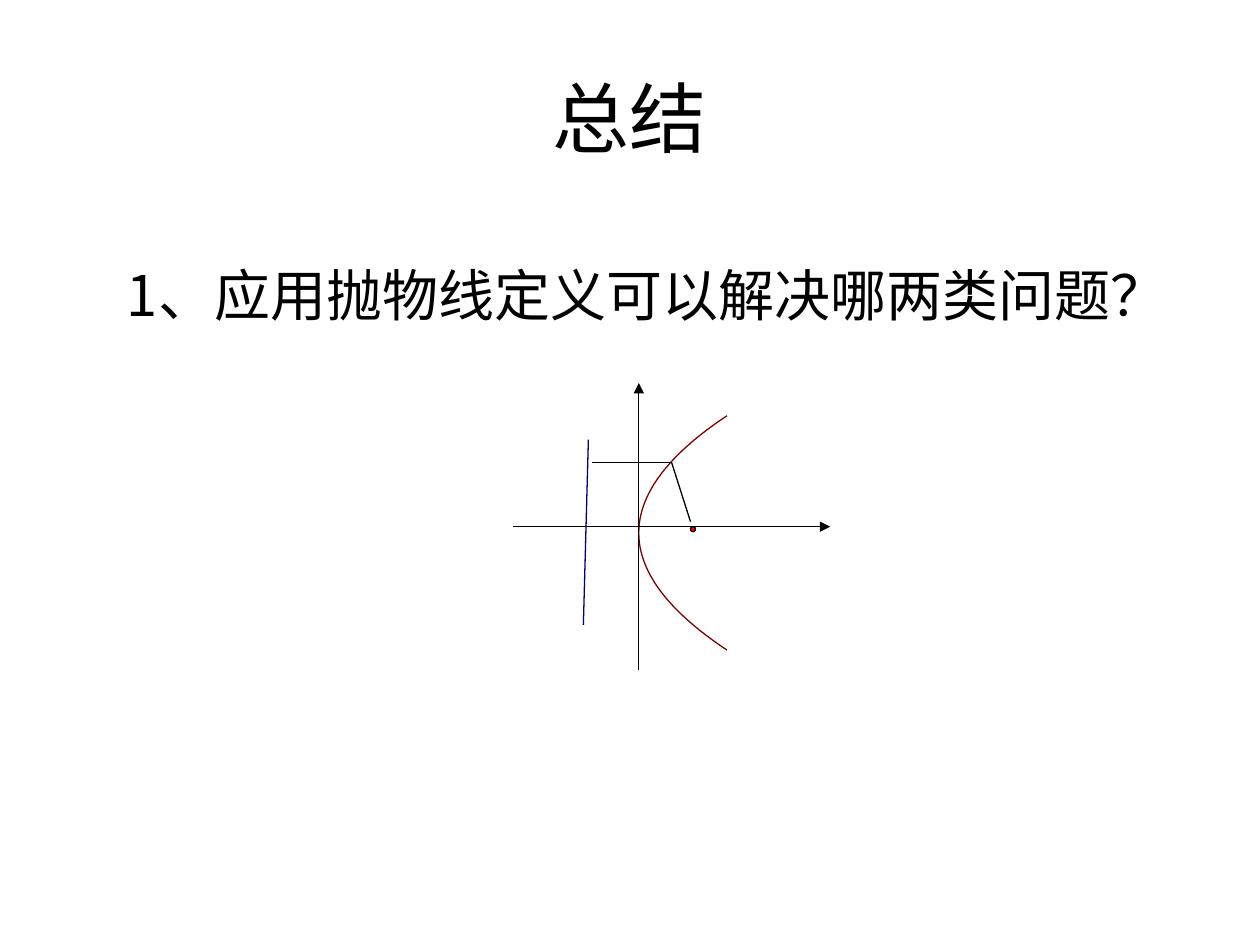
import pptx
import pptx.dml.color
import pptx.enum.shapes
import pptx.enum.text
import pptx.oxml
import pptx.oxml.ns
import pptx.util
from dataclasses import dataclass
from pptx.util import Inches


@dataclass(frozen=True)
class Theme:
    """Colours, fonts and type sizes of the slide."""
    text: str = "000000"
    axis: str = "000000"
    curve: str = "800000"
    directrix: str = "000080"
    focus: str = "FF0000"
    latin: str = "Arial"
    east_asian: str = "Noto Sans CJK SC"
    title_size: float = 44
    body_size: float = 32
    line_width: float = 0.75


THEME = Theme()


def rgb(value):
    """Return a colour from its hex digits."""
    return pptx.dml.color.RGBColor.from_string(value)


def set_attrs(obj, values):
    """Set each attribute named in a dict."""
    for name, value in values.items():
        setattr(obj, name, value)


def write_text(tf, text, size, font, align, anchor):
    """Write one formatted paragraph into a text frame."""
    set_attrs(tf, {"word_wrap": True, "vertical_anchor": anchor})
    p = tf.paragraphs[0]
    p.alignment = align
    r = p.add_run()
    r.text = text
    set_attrs(r.font, {"size": pptx.util.Pt(size), "name": font})
    r.font.color.rgb = rgb(THEME.text)
    ea = pptx.oxml.parse_xml(
        f'<a:ea {pptx.oxml.ns.nsdecls("a")} typeface="{THEME.east_asian}"/>')
    r.font._element.find(pptx.oxml.ns.qn("a:latin")).addnext(ea)


def add_title(s, box, text):
    """Place and format the title placeholder."""
    sp = s.shapes.title
    set_attrs(sp, dict(zip(("left", "top", "width", "height"), map(Inches, box))))
    write_text(sp.text_frame, text, THEME.title_size, THEME.latin,
               pptx.enum.text.PP_ALIGN.CENTER, pptx.enum.text.MSO_ANCHOR.MIDDLE)


def add_question(s, box, text):
    """Place the question in a text box."""
    tf = s.shapes.add_textbox(*map(Inches, box)).text_frame
    write_text(tf, text, THEME.body_size, THEME.east_asian,
               pptx.enum.text.PP_ALIGN.LEFT, pptx.enum.text.MSO_ANCHOR.TOP)
    tf.auto_size = pptx.enum.text.MSO_AUTO_SIZE.SHAPE_TO_FIT_TEXT


def add_line(shapes, start, end, color, arrow=False):
    """Draw a straight line, with an arrowhead at its end if asked."""
    cxn = shapes.add_connector(pptx.enum.shapes.MSO_CONNECTOR.STRAIGHT,
                               *map(Inches, start + end))
    cxn.line.width = pptx.util.Pt(THEME.line_width)
    cxn.line.color.rgb = rgb(color)
    ns = pptx.oxml.ns.nsdecls("a")
    if arrow:
        cxn.line._get_or_add_ln().append(
            pptx.oxml.parse_xml(f'<a:tailEnd {ns} type="triangle"/>'))
    cxn._element.spPr.append(pptx.oxml.parse_xml(f"<a:effectLst {ns}/>"))


def add_parabola(shapes, vertex, reach, half_height, steps=24):
    """Draw a parabola that opens to the right of its vertex."""
    points = [(Inches(vertex[0] + reach * (i / steps) ** 2),
               Inches(vertex[1] + half_height * i / steps))
              for i in range(steps, -steps - 1, -1)]
    builder = shapes.build_freeform(*points[0])
    builder.add_line_segments(points[1:], close=False)
    sp = builder.convert_to_shape()
    sp.shadow.inherit = False
    sp.fill.background()
    sp.line.width = pptx.util.Pt(THEME.line_width)
    sp.line.color.rgb = rgb(THEME.curve)


def add_focus(shapes, corner, size):
    """Draw the focus as a small dot."""
    sp = shapes.add_shape(pptx.enum.shapes.MSO_SHAPE.OVAL,
                          *map(Inches, corner + (size, size)))
    sp.shadow.inherit = False
    sp.fill.solid()
    sp.fill.fore_color.rgb = rgb(THEME.focus)
    sp.line.width = pptx.util.Pt(0)
    sp.line.color.rgb = rgb(THEME.axis)


def add_diagram(s, box):
    """Draw the parabola with its axes, directrix, focus and distances."""
    left, top, width, height = box
    shapes = s.shapes.add_group_shape().shapes

    def at(x, y):
        """Turn a position in the box into one on the slide."""
        return left + x, top + y

    origin_x, origin_y = 1.0, height / 2
    point = at(1.26, 0.63)
    add_parabola(shapes, at(origin_x, 1.19), 0.7, 0.93)
    add_line(shapes, at(0.6, 0.45), at(0.56, 1.92), THEME.directrix)
    add_focus(shapes, at(1.41, origin_y), 0.04)
    add_line(shapes, at(0, origin_y), at(width, origin_y), THEME.axis, arrow=True)
    add_line(shapes, at(origin_x, height), at(origin_x, 0), THEME.axis, arrow=True)
    for start in (at(0.63, 0.63), at(1.41, 1.1)):
        add_line(shapes, start, point, THEME.axis)


def main():
    """Build and save the slide."""
    prs = pptx.Presentation()
    set_attrs(prs, {"slide_width": Inches(10), "slide_height": Inches(7.5)})
    s = prs.slides.add_slide(prs.slide_layouts[5])
    add_title(s, (0.5, 0.3, 9, 1.25), "总结")
    add_diagram(s, (4.07, 3.04, 2.52, 2.28))
    add_question(s, (0.91, 2.02, 8.9, 0.64), "1、应用抛物线定义可以解决哪两类问题？")
    prs.save("out.pptx")


if __name__ == "__main__":
    main()
